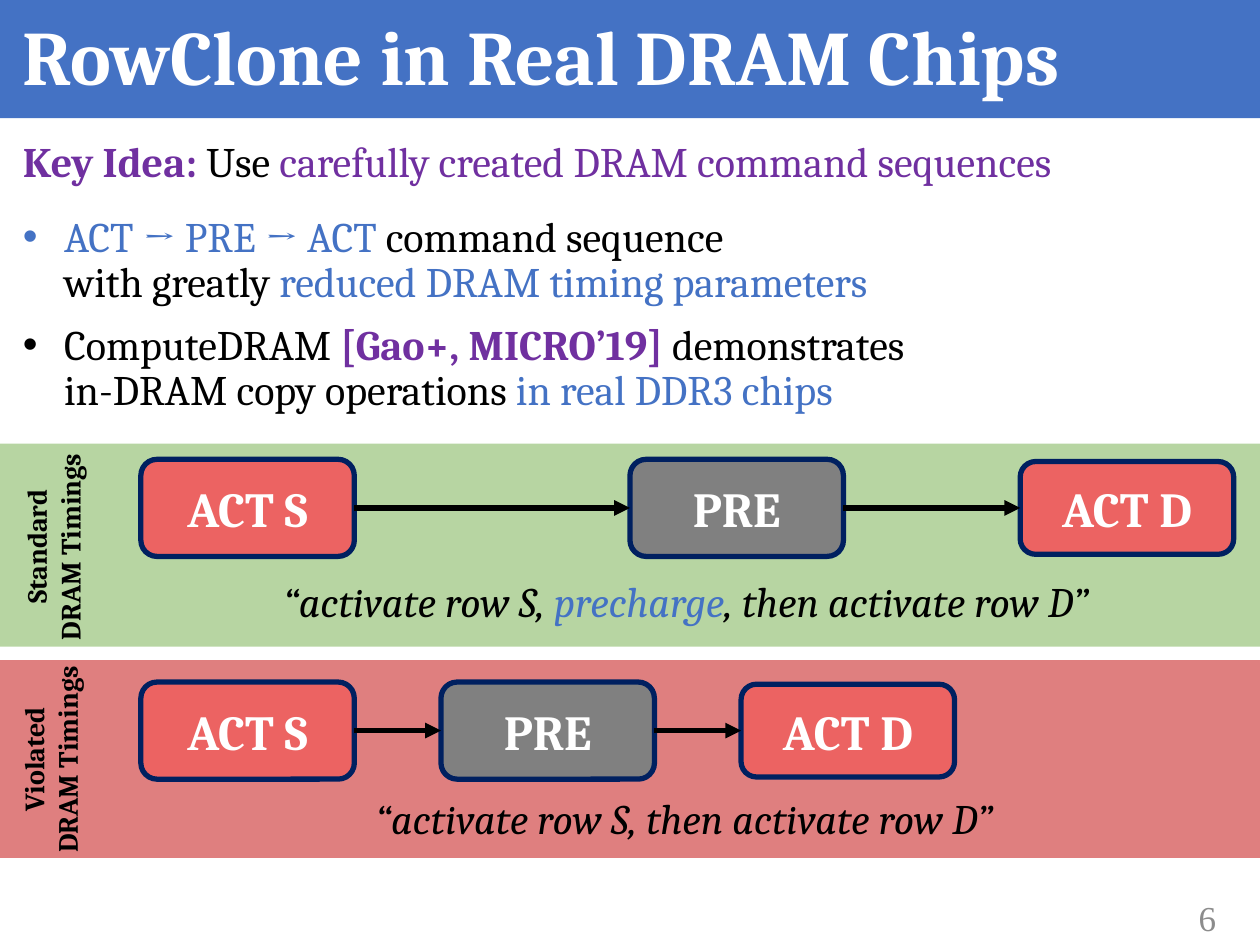
from lxml import etree
from pptx import Presentation
from pptx.dml.color import RGBColor
from pptx.enum import shapes, text
from pptx.oxml import ns
from pptx.util import Pt

SERIF = "Cambria"
WHITE, BLACK, BLUE, PURPLE = "FFFFFF", "000000", "4472C4", "7030A0"
RED, GRAY, NAVY = "EC6362", "808080", "002060"
WIDTH, HEIGHT = 720, 540
COMMAND_WIDTH = 122


def color(value):
    return RGBColor.from_string(value)


def add_sub(parent, tag, **attributes):
    return etree.SubElement(parent, ns.qn(tag), attributes)


def style_font(paragraph, size, ink, bold=False, italic=False, name=SERIF):
    font = paragraph.font
    font.name, font.size = name, Pt(size)
    font.bold, font.italic = bold, italic
    font.color.rgb = color(ink)


def add_runs(paragraph, runs):
    """Add (text, colour, bold) runs; a newline becomes a line break."""
    for content, ink, bold in runs:
        for i, line in enumerate(content.split("\n")):
            if i:
                paragraph.add_line_break()
            if line:
                run = paragraph.add_run()
                run.text = line
                run.font.color.rgb = color(ink)
                run.font.bold = bold


def add_box(slide, left, top, width, height, anchor=text.MSO_ANCHOR.MIDDLE):
    box = slide.shapes.add_textbox(Pt(left), Pt(top), Pt(width), Pt(height))
    box.text_frame.word_wrap = True
    box.text_frame.vertical_anchor = anchor
    return box


def add_band(slide, top, height, fill, alpha=None):
    band = slide.shapes.add_shape(
        shapes.MSO_SHAPE.RECTANGLE, 0, Pt(top), Pt(WIDTH), Pt(height))
    band.shadow.inherit = False
    band.fill.solid()
    band.fill.fore_color.rgb = color(fill)
    band.line.fill.background()
    if alpha:
        fill_color = band._element.spPr.find(".//" + ns.qn("a:srgbClr"))
        add_sub(fill_color, "a:alpha", val=str(alpha * 1000))


def add_command(slide, label, left, middle, height, fill):
    command = slide.shapes.add_shape(
        shapes.MSO_SHAPE.ROUNDED_RECTANGLE, Pt(left), Pt(middle - height / 2),
        Pt(COMMAND_WIDTH), Pt(height))
    command.shadow.inherit = False
    command.fill.solid()
    command.fill.fore_color.rgb = color(fill)
    command.line.color.rgb = color(NAVY)
    command.line.width = Pt(3)
    command.text_frame.vertical_anchor = text.MSO_ANCHOR.MIDDLE
    paragraph = command.text_frame.paragraphs[0]
    paragraph.text = label
    paragraph.alignment = text.PP_ALIGN.CENTER
    style_font(paragraph, 28, WHITE, bold=True)


def add_arrow(slide, start, end, y):
    arrow = slide.shapes.add_connector(
        shapes.MSO_CONNECTOR.STRAIGHT, Pt(start), Pt(y), Pt(end), Pt(y))
    arrow.line.color.rgb = color(BLACK)
    arrow.line.width = Pt(3)
    add_sub(arrow.line._get_or_add_ln(), "a:tailEnd", type="triangle")
    add_sub(arrow._element.spPr, "a:effectLst")


def add_sequence(slide, lefts, middle):
    """Draw the three commands and the arrows between them."""
    commands = [("ACT S", 55.5, RED), ("PRE", 55.5, GRAY), ("ACT D", 53, RED)]
    for (label, height, fill), left in zip(commands, lefts):
        add_command(slide, label, left, middle, height, fill)
    for left, following in zip(lefts, lefts[1:]):
        add_arrow(slide, left + COMMAND_WIDTH, following, middle)


def add_side_label(slide, label, center_x, center_y):
    width, height = 142, 46
    box = add_box(slide, center_x - width / 2, center_y - height / 2, width, height)
    box.rotation = 270
    paragraph = box.text_frame.paragraphs[0]
    paragraph.text = label.replace("\n", "\v")
    paragraph.alignment = text.PP_ALIGN.CENTER
    style_font(paragraph, 16, BLACK, bold=True)


def add_caption(slide, runs, left, top, width):
    box = add_box(slide, left, top, width, 36, text.MSO_ANCHOR.TOP)
    paragraph = box.text_frame.paragraphs[0]
    add_runs(paragraph, runs)
    paragraph.alignment = text.PP_ALIGN.CENTER
    style_font(paragraph, 24, BLACK, italic=True)


def add_body(slide):
    body = add_box(slide, 6, 77, 708, 170, text.MSO_ANCHOR.TOP).text_frame
    # Each entry: space before, bulleted, runs
    content = [
        (0, False, [("Key Idea: ", PURPLE, True), ("Use ", BLACK, False),
                    ("carefully created DRAM command sequences", PURPLE, False)]),
        (17, True, [("ACT → PRE → ACT ", BLUE, False),
                    ("command sequence\nwith greatly ", BLACK, False),
                    ("reduced DRAM timing parameters", BLUE, False)]),
        (10, True, [("ComputeDRAM ", BLACK, False),
                    ("[Gao+, MICRO’19]", PURPLE, True),
                    (" demonstrates\nin-DRAM copy operations ", BLACK, False),
                    ("in real DDR3 chips", BLUE, False)]),
    ]
    for i, (space, bulleted, runs) in enumerate(content):
        paragraph = body.add_paragraph() if i else body.paragraphs[0]
        paragraph.line_spacing = 0.9
        paragraph.space_before = Pt(space)
        if bulleted:
            properties = paragraph._p.get_or_add_pPr()
            properties.set("marL", str(Pt(23.5)))
            properties.set("indent", str(-Pt(23.5)))
            add_sub(properties, "a:buFont", typeface="Arial")
            add_sub(properties, "a:buChar", char="•")
        add_runs(paragraph, runs)
        style_font(paragraph, 24, BLACK)


def main():
    deck = Presentation()
    deck.slide_width, deck.slide_height = Pt(WIDTH), Pt(HEIGHT)
    slide = deck.slides.add_slide(deck.slide_layouts[6])

    # Title bar
    add_band(slide, 0, 67.5, BLUE)
    title = add_box(slide, 6, 1, 708, 60).text_frame.paragraphs[0]
    title.text = "RowClone in Real DRAM Chips"
    style_font(title, 44, WHITE, bold=True)

    add_body(slide)

    # Standard timings
    add_band(slide, 253.5, 116, "70AD47", alpha=50)
    add_sequence(slide, (80.5, 360, 583), 290.25)
    add_side_label(slide, "Standard\nDRAM Timings", 30, 312.5)
    add_caption(slide, [("“activate row S, ", BLACK, False),
                        ("precharge", BLUE, False),
                        (", then activate row D”", BLACK, False)], 137, 325.5, 510)

    # Violated timings
    add_band(slide, 377.25, 113, "C00000", alpha=50)
    add_sequence(slide, (80.5, 252, 423.5), 417.5)
    add_side_label(slide, "Violated\nDRAM Timings", 28.5, 434)
    add_caption(slide, [("“activate row S, then activate row D”", BLACK, False)],
                180, 449.25, 422)

    # Slide number
    number = add_box(slide, 624, 510, 78, 29).text_frame.paragraphs[0]
    number.text = "6"
    number.alignment = text.PP_ALIGN.RIGHT
    style_font(number, 20, "8C8C8C", name="Times New Roman")

    deck.save("out.pptx")


if __name__ == "__main__":
    main()
